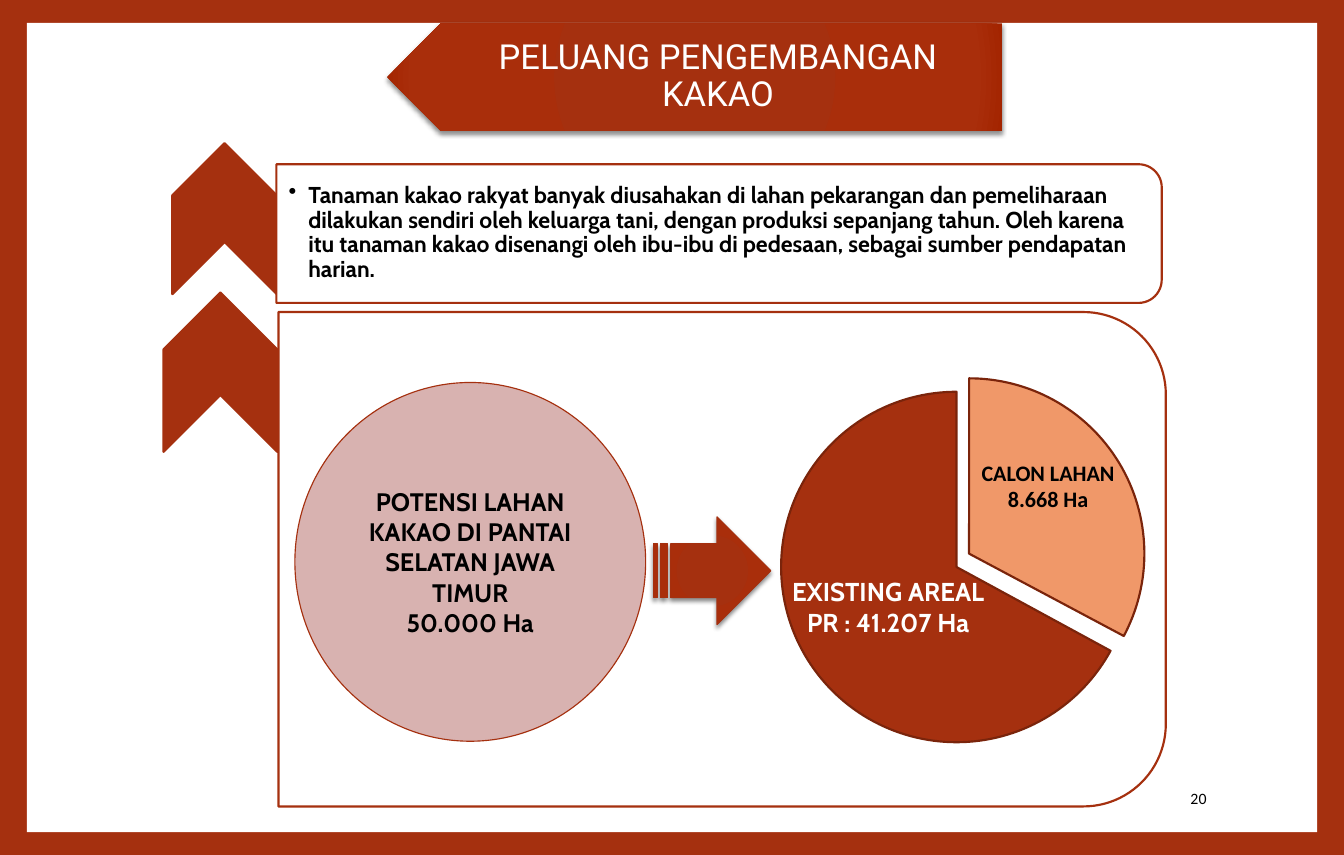
from dataclasses import dataclass
from typing import Optional

from pptx import Presentation
from pptx.dml.color import RGBColor as Rgb
from pptx.enum.shapes import MSO_SHAPE as Kind
from pptx.enum.text import MSO_ANCHOR as Anchor, PP_ALIGN as Align
from pptx.oxml import parse_xml
from pptx.oxml.ns import nsdecls
from pptx.util import Cm, Inches, Pt

WIDE, HIGH = Cm(33), Cm(21)
COLS = ROWS = 100
DISC = 26.1
HUES = {
    "rust": "A5300F",
    "ember": "A92E0B",
    "brick": "A32400",
    "brown": "7A240B",
    "peach": "F09869",
    "rose": "D8B2B0",
    "white": "FFFFFF",
    "black": "000000",
}


@dataclass(frozen=True)
class Box:
    col: float
    row: float
    wide: float
    high: float

    def frame(self) -> tuple[int, int, int, int]:
        across, down = WIDE / COLS, HIGH / ROWS
        return (round(self.col * across), round(self.row * down),
                round(self.wide * across), round(self.high * down))


@dataclass(frozen=True)
class Form:
    kind: Kind
    box: Box
    fill: str = "rust"
    line: Optional[str] = "rust"
    weight: float = 1.5
    turn: float = 0
    arc: tuple[float, ...] = ()
    glossy: bool = False


def add_gloss(shape) -> None:
    stops = "".join(
        f'<a:gs pos="{spot * 1000}"><a:srgbClr val="{HUES[hue]}"/></a:gs>'
        for spot, hue in ((0, "rust"), (90, "ember"), (100, "brick")))
    props = shape._element.spPr
    props.prstGeom.addnext(parse_xml(
        f'<a:gradFill {nsdecls("a")} rotWithShape="1"><a:gsLst>{stops}</a:gsLst>'
        '<a:path path="circle"><a:fillToRect l="100000" t="100000" '
        'r="100000" b="100000"/></a:path></a:gradFill>'))
    props.find("{*}effectLst").append(parse_xml(
        f'<a:outerShdw {nsdecls("a")} blurRad="{Pt(3)}" dist="{Pt(2)}" '
        f'dir="5400000" rotWithShape="0"><a:srgbClr val="{HUES["black"]}">'
        '<a:alpha val="45000"/></a:srgbClr></a:outerShdw>'))


def draw_form(slide, form: Form):
    shape = slide.shapes.add_shape(form.kind, *form.box.frame())
    shape.rotation = form.turn
    shape.shadow.inherit = False
    for spot, angle in enumerate(form.arc):
        shape.adjustments[spot] = angle * 0.6
    if form.line:
        shape.line.color.rgb = Rgb.from_string(HUES[form.line])
        shape.line.width = Pt(form.weight)
    else:
        shape.line.fill.background()
    if form.glossy:
        add_gloss(shape)
    else:
        shape.fill.solid()
        shape.fill.fore_color.rgb = Rgb.from_string(HUES[form.fill])
    return shape


def write(shape, *lines: str, size: float, font: str = "Cabin",
          hue: str = "black", bold: bool = True, align: Align = Align.CENTER,
          anchor: Anchor = Anchor.MIDDLE, space: float = 1, dot: bool = False,
          inset: tuple[float, ...] = (0.1, 0.05, 0.1, 0.05)) -> None:
    frame = shape.text_frame
    frame.word_wrap = True
    frame.vertical_anchor = anchor
    (frame.margin_left, frame.margin_top,
     frame.margin_right, frame.margin_bottom) = map(Inches, inset)
    for spot, line in enumerate(lines):
        para = frame.add_paragraph() if spot else frame.paragraphs[0]
        para.alignment = align
        para.line_spacing = space
        run = para.add_run()
        run.text = line
        run.font.name = font
        run.font.size = Pt(size)
        run.font.bold = bold
        run.font.color.rgb = Rgb.from_string(HUES[hue])
        if dot:
            props = para._p.get_or_add_pPr()
            props.set("marL", str(Inches(0.19)))
            props.set("indent", str(-Inches(0.19)))
            props.append(parse_xml(f'<a:buChar {nsdecls("a")} char="•"/>'))


def add_text(slide, box: Box, *lines: str, **style) -> None:
    write(slide.shapes.add_textbox(*box.frame()), *lines, **style)


def build() -> None:
    deck = Presentation()
    deck.slide_width, deck.slide_height = WIDE, HIGH
    slide = deck.slides.add_slide(deck.slide_layouts[6])
    back = slide.background.fill
    back.solid()
    back.fore_color.rgb = Rgb.from_string(HUES["rust"])

    panel = Kind.ROUND_2_SAME_RECTANGLE
    forms = (
        Form(Kind.RECTANGLE, Box(2, 2.66, 96, 94.68), "white", None),
        Form(Kind.PENTAGON, Box(28.79, 2.74, 45.8, 12.58), line=None,
             turn=180, glossy=True),
        Form(Kind.CHEVRON, Box(11.09, 19.47, 11.24, 12.21), turn=270),
        Form(panel, Box(48.34, -24.43, 10.32, 103.51), "white", turn=90),
        Form(Kind.CHEVRON, Box(10.47, 36.88, 11.86, 13.3), turn=270),
        Form(panel, Box(35.33, 13.54, 36.8, 103.75), "white", turn=90),
        Form(Kind.PIE, Box(58.12, 45.83, DISC, 40.99), line="brown",
             arc=(28.55, 270)),
        Form(Kind.PIE, Box(59.05, 44.26, DISC, 40.99), "peach", "brown",
             turn=115, arc=(155.02, 273.03)),
        Form(Kind.STRIPED_RIGHT_ARROW, Box(48.65, 60.46, 8.7, 12.58),
             weight=0.79, glossy=True),
    )
    for form in forms:
        draw_form(slide, form)

    disc = draw_form(slide, Form(
        Kind.OVAL, Box(21.94, 44.74, DISC, 41.96), "rose", weight=0.79))
    write(disc, "POTENSI LAHAN KAKAO DI PANTAI SELATAN JAWA TIMUR",
          "50.000 Ha", size=17.6)

    add_text(slide, Box(30.79, 2.74, 43.8, 12.58),
             "PELUANG PENGEMBANGAN KAKAO", size=24, font="Roboto",
             hue="white", bold=False, space=0.9, inset=(0.46, 0.1, 0.27, 0.1))
    add_text(slide, Box(20.55, 19.95, 65.36, 14.63),
             "Tanaman kakao rakyat banyak diusahakan di lahan pekarangan dan "
             "pemeliharaan dilakukan sendiri oleh keluarga tani, dengan "
             "produksi sepanjang tahun. Oleh karena itu tanaman kakao "
             "disenangi oleh ibu-ibu di pedesaan, sebagai sumber pendapatan "
             "harian.", size=16, align=Align.LEFT, space=0.9, dot=True,
             inset=(0.12, 0.01, 0.01, 0.01))
    add_text(slide, Box(58.04, 66.75, 16.09, 8.59), "EXISTING AREAL",
             "PR : 41.207 Ha", size=18, hue="white", anchor=Anchor.TOP)
    add_text(slide, Box(70.98, 53.08, 14.01, 7.5), "CALON LAHAN",
             "8.668 Ha", size=15.4, font="Calibri", anchor=Anchor.TOP)
    add_text(slide, Box(76.52, 90.69, 14.01, 5.32), "20", size=11,
             font="Calibri", bold=False, align=Align.RIGHT)
    deck.save("out.pptx")


if __name__ == "__main__":
    build()
